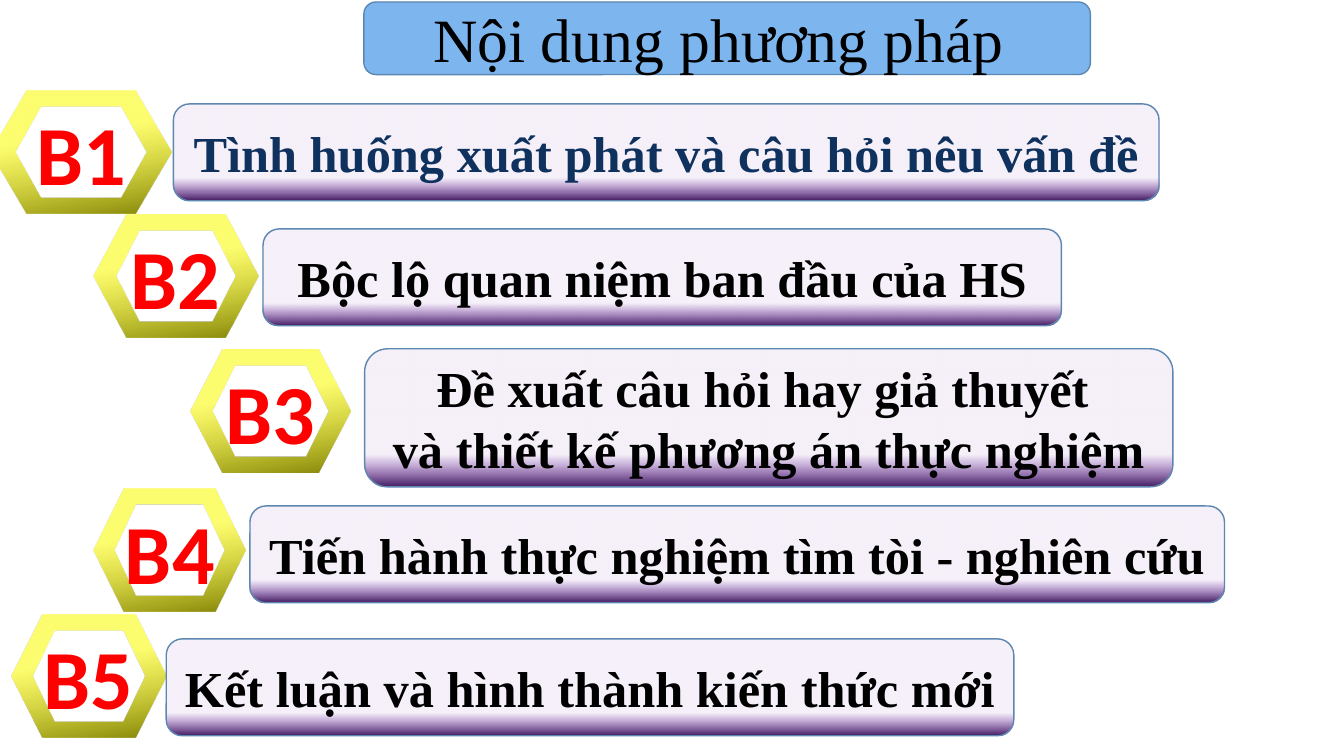
from dataclasses import dataclass

from lxml import etree
from pptx import Presentation
from pptx.dml.color import RGBColor
from pptx.enum.shapes import MSO_SHAPE
from pptx.enum.text import MSO_ANCHOR, PP_ALIGN
from pptx.oxml.ns import qn
from pptx.util import Cm, Pt

ROUNDED = MSO_SHAPE.ROUNDED_RECTANGLE
MIDDLE = MSO_ANCHOR.MIDDLE
CENTER = PP_ALIGN.CENTER


@dataclass(frozen=True)
class Gradient:
    """Two stops, the first one see-through; angle runs clockwise."""
    start: str
    start_at: float
    opacity: int
    end: str
    angle: int


@dataclass(frozen=True)
class Theme:
    heading_fill: str = "7DB6EF"
    outline: str = "5C87B1"
    text: str = "000000"
    accent_text: str = "0F315E"
    badge_text: str = "FF0000"
    bar: Gradient = Gradient("7B32B2", 0.76, 7, "401A5D", 90)
    badge: Gradient = Gradient("FBFB11", 0.38, 60, "838309", 80)
    serif: str = "Times New Roman"
    sans: str = "Calibri"
    heading_size: int = 44
    step_size: int = 36
    badge_size: int = 60


@dataclass(frozen=True)
class Box:
    """Position and size in centimetres."""
    left: float
    top: float
    width: float
    height: float

    def lengths(self) -> tuple:
        return Cm(self.left), Cm(self.top), Cm(self.width), Cm(self.height)


@dataclass(frozen=True)
class Step:
    text: str
    badge: Box
    bar: Box
    color: str


THEME = Theme()
BADGE_HEIGHT = 3.1
BAR_HEIGHT = 2.44
BADGE_RIM = 0.41

HEADING = "Nội dung phương pháp"
HEADING_BAR = Box(9.17, 0.05, 18.31, 1.83)
HEADING_TEXT = Box(10.67, -0.1, 15.6, 2.13)

STEPS = [
    Step("Tình huống xuất phát và câu hỏi nêu vấn đề",
         Box(-0.23, 2.29, 4.55, BADGE_HEIGHT),
         Box(4.37, 2.62, 24.84, BAR_HEIGHT), THEME.accent_text),
    Step("Bộc lộ quan niệm ban đầu của HS",
         Box(2.36, 5.41, 4.14, BADGE_HEIGHT),
         Box(6.63, 5.77, 20.12, BAR_HEIGHT), THEME.text),
    Step("Đề xuất câu hỏi hay giả thuyết \nvà thiết kế phương án thực nghiệm",
         Box(4.8, 8.81, 4.04, BADGE_HEIGHT),
         Box(9.19, 8.79, 20.37, 3.48), THEME.text),
    Step("Tiến hành thực nghiệm tìm tòi - nghiên cứu",
         Box(2.36, 12.32, 3.84, BADGE_HEIGHT),
         Box(6.3, 12.75, 24.56, BAR_HEIGHT), THEME.text),
    Step("Kết luận và hình thành kiến thức mới",
         Box(0.28, 15.49, 3.91, BADGE_HEIGHT),
         Box(4.19, 16.1, 21.36, BAR_HEIGHT), THEME.text),
]


def rgb(value: str) -> RGBColor:
    return RGBColor.from_string(value)


def write_text(shape, text: str, font: str, size: int, color: str,
               bold: bool = True, align=CENTER) -> None:
    frame = shape.text_frame
    frame.text = text
    frame.word_wrap = False
    frame.vertical_anchor = MIDDLE
    for paragraph in frame.paragraphs:
        paragraph.alignment = align
        for run in paragraph.runs:
            run.font.name = font
            run.font.size = Pt(size)
            run.font.bold = bold
            run.font.color.rgb = rgb(color)


def fill_gradient(shape, gradient: Gradient) -> None:
    shape.fill.gradient()
    shape.fill.gradient_angle = 360 - gradient.angle
    first, last = shape.fill.gradient_stops
    first.position, last.position = gradient.start_at, 1.0
    first.color.rgb, last.color.rgb = rgb(gradient.start), rgb(gradient.end)
    start_color = next(shape._element.spPr.iter(qn("a:srgbClr")))
    alpha = etree.SubElement(start_color, qn("a:alpha"))
    alpha.set("val", str(gradient.opacity * 1000))


def add_bar(slide, box: Box):
    bar = slide.shapes.add_shape(ROUNDED, *box.lengths())
    bar.shadow.inherit = False
    bar.line.color.rgb = rgb(THEME.outline)
    bar.line.width = Pt(1)
    return bar


def hexagon(box: Box, inset: float, rim: float, corner: float) -> list[tuple]:
    """Corners of a hexagon; inset and corner are shares of the box width."""
    left, right = box.left + inset * box.width, box.left + (1 - inset) * box.width
    near, far = box.left + corner * box.width, box.left + (1 - corner) * box.width
    top, bottom = box.top + rim, box.top + box.height - rim
    middle = box.top + box.height / 2
    points = [(near, top), (far, top), (right, middle),
              (far, bottom), (near, bottom), (left, middle)]
    return [(Cm(x), Cm(y)) for x, y in points]


def add_badge(slide, box: Box, label: str) -> None:
    outer = hexagon(box, 0, 0, 0.2)
    inner = hexagon(box, 0.14, BADGE_RIM, 0.28)[::-1]
    ring = slide.shapes.build_freeform(*outer[0])
    ring.add_line_segments(outer[1:], close=True)
    ring.move_to(*inner[0])
    ring.add_line_segments(inner[1:], close=True)
    badge = ring.convert_to_shape()
    badge.shadow.inherit = False
    fill_gradient(badge, THEME.badge)
    badge.line.fill.background()
    write_text(badge, label, THEME.sans, THEME.badge_size, THEME.badge_text)


def add_heading(slide) -> None:
    bar = add_bar(slide, HEADING_BAR)
    bar.fill.solid()
    bar.fill.fore_color.rgb = rgb(THEME.heading_fill)
    caption = slide.shapes.add_textbox(*HEADING_TEXT.lengths())
    write_text(caption, HEADING, THEME.serif, THEME.heading_size, THEME.text,
               bold=False, align=PP_ALIGN.LEFT)


def add_step(slide, number: int, step: Step) -> None:
    add_badge(slide, step.badge, f"B{number}")
    bar = add_bar(slide, step.bar)
    fill_gradient(bar, THEME.bar)
    write_text(bar, step.text, THEME.serif, THEME.step_size, step.color)


def main() -> None:
    deck = Presentation()
    deck.slide_width, deck.slide_height = Cm(33.87), Cm(19.05)
    slide = deck.slides.add_slide(deck.slide_layouts[6])

    # Heading
    add_heading(slide)

    # Five steps of the method
    for number, step in enumerate(STEPS, start=1):
        add_step(slide, number, step)

    deck.save("out.pptx")


if __name__ == "__main__":
    main()
